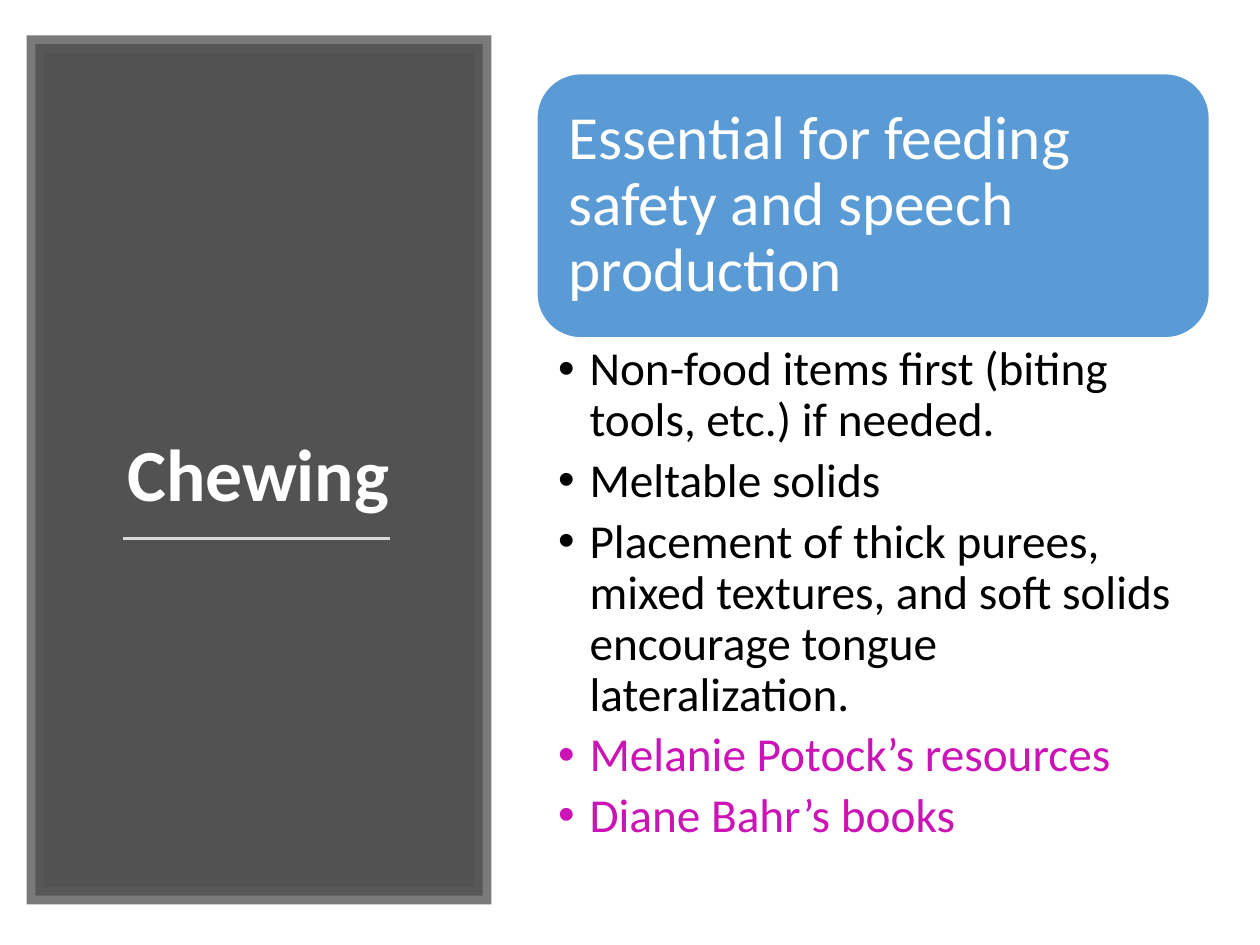
from lxml.etree import SubElement as Sub
from pptx import Presentation
from pptx.dml.color import RGBColor as RGB
from pptx.enum.shapes import MSO_CONNECTOR as Link, MSO_SHAPE as Kind
from pptx.enum.text import MSO_ANCHOR as Anchor, MSO_AUTO_SIZE as Fit, PP_ALIGN as Align
from pptx.oxml.ns import qn
from pptx.util import Pt

WHITE = RGB(0xFF, 0xFF, 0xFF)
BLACK = RGB(0x00, 0x00, 0x00)
DARK = RGB(0x40, 0x40, 0x40)
GRAY = RGB(0x59, 0x59, 0x59)
LIGHT = RGB(0xD9, 0xD9, 0xD9)
BLUE = RGB(0x5B, 0x9B, 0xD5)
PINK = RGB(0xCC, 0x13, 0xB6)

ITEMS = [
    ("Non-food items first (biting tools, etc.) if needed.", BLACK),
    ("Meltable solids", BLACK),
    ("Placement of thick purees, mixed textures, and soft solids "
     "encourage tongue lateralization.", BLACK),
    ("Melanie Potock’s resources", PINK),
    ("Diane Bahr’s books", PINK),
]


def place(shape, x, y, w, h):
    shape.left, shape.top, shape.width, shape.height = Pt(x), Pt(y), Pt(w), Pt(h)


def fade(fill, percent):
    """Set the opacity of a solid fill."""
    color = fill._xPr.find(qn("a:solidFill"))[0]
    Sub(color, qn("a:alpha"), val=str(percent * 1000))


def setup(frame, anchor, left, top, right, bottom):
    frame.word_wrap = True
    frame.auto_size = Fit.NONE
    frame.vertical_anchor = anchor
    frame.margin_left, frame.margin_top = Pt(left), Pt(top)
    frame.margin_right, frame.margin_bottom = Pt(right), Pt(bottom)


def style(para, size, color, align=Align.LEFT, after=0, bold=False):
    para.alignment = align
    para.line_spacing = 0.9
    para.space_before, para.space_after = Pt(0), Pt(after)
    font = para.font
    font.name, font.size, font.bold = "Calibri", Pt(size), bold
    font.color.rgb = color


def add_panel(slide, x, y, w, h):
    # Dark frame with square corners
    panel = slide.shapes.add_shape(Kind.RECTANGLE, Pt(x), Pt(y), Pt(w), Pt(h))
    panel.shadow.inherit = False
    panel.fill.solid()
    panel.fill.fore_color.rgb = DARK
    fade(panel.fill, 90)
    panel.line.width = Pt(10)
    panel.line.color.rgb = GRAY
    fade(panel.line.fill, 80)
    Sub(panel.line.fill._xPr, qn("a:miter"), lim="800000")

    # Title, brought in front of the frame
    title = slide.shapes.title
    place(title, x + 19.4, y + 46.8, 216, 227.5)
    setup(title.text_frame, Anchor.BOTTOM, 7.2, 3.6, 7.2, 3.6)
    title.text_frame.text = "Chewing"
    style(title.text_frame.paragraphs[0], 42, WHITE, Align.CENTER, bold=True)
    slide.shapes._spTree.append(title._element)

    # Rule under the title
    rule = slide.shapes.add_connector(
        Link.STRAIGHT, Pt(x + 50.2), Pt(y + 282.6), Pt(x + 202.8), Pt(y + 282.6))
    rule.line.color.rgb = LIGHT
    rule.line.width = Pt(1.75)
    Sub(rule._element.spPr, qn("a:effectLst"))


def add_card(slide, x, y, w, h):
    card = slide.shapes.add_shape(
        Kind.ROUNDED_RECTANGLE, Pt(x), Pt(y), Pt(w), Pt(h))
    card.shadow.inherit = False
    card.fill.solid()
    card.fill.fore_color.rgb = BLUE
    card.line.color.rgb = WHITE
    card.line.width = Pt(1)
    setup(card.text_frame, Anchor.MIDDLE, 10.8, 10.8, 10.8, 10.8)
    card.text_frame.text = "Essential for feeding safety and speech production"
    style(card.text_frame.paragraphs[0], 35, WHITE)


def add_list(slide, x, y, w, h):
    body = slide.placeholders[1]
    place(body, x, y, w, h)
    frame = body.text_frame
    setup(frame, Anchor.TOP, 12.2, 3.6, 19.4, 3.6)
    frame.text = "\n".join(text for text, _ in ITEMS)
    for para, (_, color) in zip(frame.paragraphs, ITEMS):
        style(para, 27, color, after=5.4)
        # Hanging bullet
        props = para._p.get_or_add_pPr()
        props.set("marL", str(Pt(18)))
        props.set("indent", str(Pt(-18)))


def main():
    deck = Presentation()
    deck.slide_width, deck.slide_height = Pt(720), Pt(540)
    slide = deck.slides.add_slide(deck.slide_layouts[1])
    add_panel(slide, 20.2, 25.2, 255.6, 486.7)
    add_card(slide, 306.7, 42, 384.5, 151.2)
    add_list(slide, 306.7, 193.5, 384.5, 302.4)
    deck.save("out.pptx")


if __name__ == "__main__":
    main()
